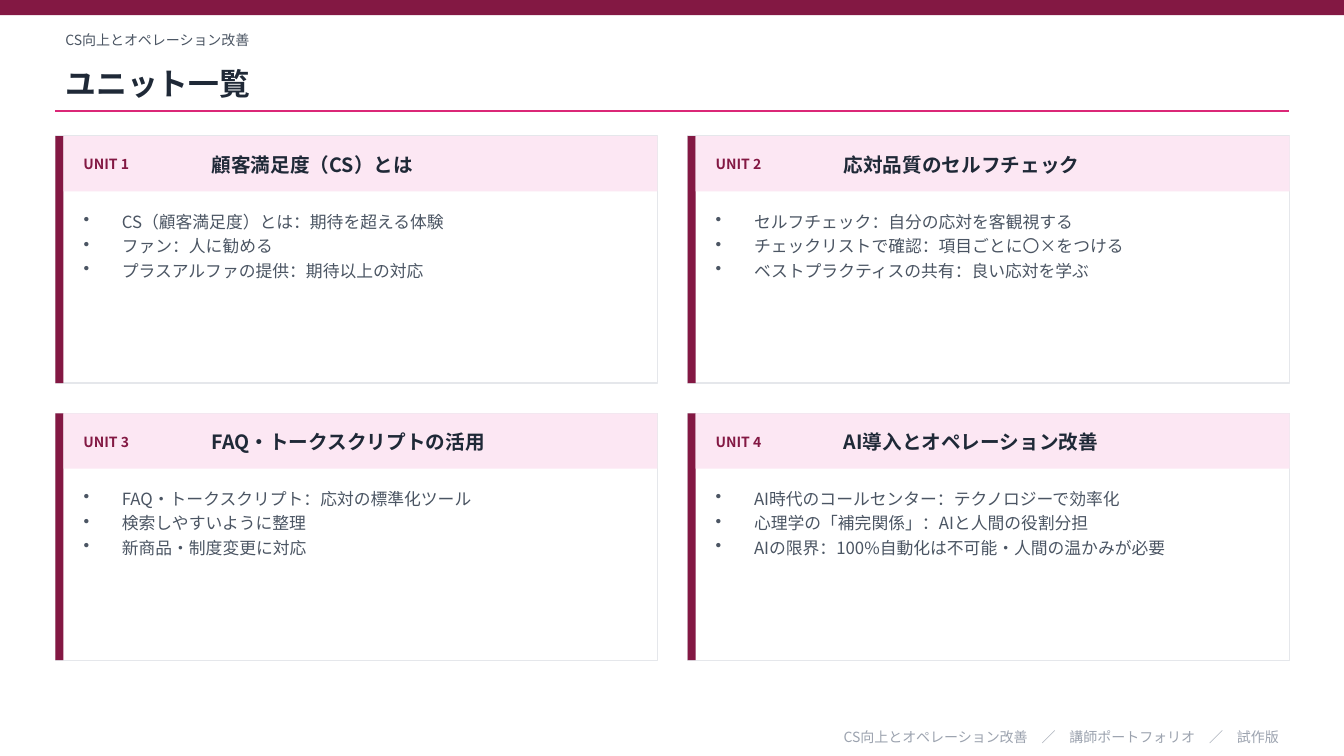
from pptx import Presentation
from pptx.dml.color import RGBColor
from pptx.enum.shapes import MSO_CONNECTOR, MSO_SHAPE
from pptx.enum.text import MSO_ANCHOR, MSO_AUTO_SIZE, PP_ALIGN
from pptx.oxml.ns import qn
from pptx.util import Inches, Pt
from lxml import etree

RECT, STRAIGHT = MSO_SHAPE.RECTANGLE, MSO_CONNECTOR.STRAIGHT
TOP, MIDDLE = MSO_ANCHOR.TOP, MSO_ANCHOR.MIDDLE
LEFT, RIGHT = PP_ALIGN.LEFT, PP_ALIGN.RIGHT

WINE = RGBColor(0x83, 0x18, 0x43)
PINK = RGBColor(0xDB, 0x27, 0x77)
BLUSH = RGBColor(0xFC, 0xE7, 0xF3)
WHITE = RGBColor(0xFF, 0xFF, 0xFF)
BORDER = RGBColor(0xE5, 0xE7, 0xEB)
INK = RGBColor(0x1F, 0x29, 0x37)
SLATE = RGBColor(0x4B, 0x55, 0x63)
MUTED = RGBColor(0x9C, 0xA3, 0xAF)

FONT = "Noto Sans CJK JP"
COLS, ROWS = 133.3, 75  # grid of tenths of an inch
MARGIN, CONTENT_W = 5.5, 122.3
CARD_TOP, CARD_W, CARD_H, GAP = 13.5, 59.7, 24.5, 3
STRIPE = 0.8

UNITS = [
    ("顧客満足度（CS）とは",
     ["CS（顧客満足度）とは：期待を超える体験",
      "ファン：人に勧める",
      "プラスアルファの提供：期待以上の対応"]),
    ("応対品質のセルフチェック",
     ["セルフチェック：自分の応対を客観視する",
      "チェックリストで確認：項目ごとに〇×をつける",
      "ベストプラクティスの共有：良い応対を学ぶ"]),
    ("FAQ・トークスクリプトの活用",
     ["FAQ・トークスクリプト：応対の標準化ツール",
      "検索しやすいように整理",
      "新商品・制度変更に対応"]),
    ("AI導入とオペレーション改善",
     ["AI時代のコールセンター：テクノロジーで効率化",
      "心理学の「補完関係」：AIと人間の役割分担",
      "AIの限界：100%自動化は不可能・人間の温かみが必要"]),
]


def grid(*cells):
    return [Inches(c / 10) for c in cells]


def write(tf, lines, size=10, color=SLATE, bold=False, align=LEFT,
          anchor=MIDDLE, bullet=None, after=0):
    tf.word_wrap = True
    tf.auto_size = MSO_AUTO_SIZE.NONE
    tf.vertical_anchor = anchor
    for i, line in enumerate(lines):
        p = tf.paragraphs[0] if i == 0 else tf.add_paragraph()
        p.alignment = align
        p.space_after = Pt(after)
        if bullet:
            pPr = p._p.get_or_add_pPr()
            pPr.set("marL", str(Inches(0.38)))
            pPr.set("indent", str(-Inches(0.38)))
            etree.SubElement(pPr, qn("a:buChar")).set("char", bullet)
        r = p.add_run()
        r.text = line
        r.font.size, r.font.bold, r.font.name = Pt(size), bold, FONT
        r.font.color.rgb = color
        # East Asian glyphs use the same typeface
        etree.SubElement(r._r.get_or_add_rPr(), qn("a:ea")).set("typeface", FONT)


class Deck:
    def __init__(self):
        self.prs = Presentation()
        self.prs.slide_width, self.prs.slide_height = grid(COLS, ROWS)
        self.s = self.prs.slides.add_slide(self.prs.slide_layouts[5])

    def title(self, text, box, **style):
        sp = self.s.shapes.title
        sp.left, sp.top, sp.width, sp.height = grid(*box)
        write(sp.text_frame, [text], **style)

    def text(self, lines, box, **style):
        sp = self.s.shapes.add_textbox(*grid(*box))
        write(sp.text_frame, lines, **style)

    def rect(self, box, fill, line=None):
        sp = self.s.shapes.add_shape(RECT, *grid(*box))
        sp.shadow.inherit = False
        sp.fill.solid()
        sp.fill.fore_color.rgb = fill
        if line is None:
            sp.line.fill.background()
        else:
            sp.line.color.rgb, sp.line.width = line, Pt(1)

    def rule(self, x, y, w, color):
        ln = self.s.shapes.add_connector(STRAIGHT, *grid(x, y, x + w, y))
        ln.line.color.rgb, ln.line.width = color, Pt(1)
        etree.SubElement(ln._element.spPr, qn("a:effectLst"))

    def card(self, n, heading, points):
        row, col = divmod(n, 2)
        x = MARGIN + col * (CARD_W + GAP)
        y = CARD_TOP + row * (CARD_H + GAP)
        self.rect((x, y, CARD_W, CARD_H), WHITE, BORDER)
        self.rect((x, y, STRIPE, CARD_H), WINE)
        self.rect((x + STRIPE, y, CARD_W - STRIPE, 5.5), BLUSH)
        self.text([f"UNIT {n + 1}"], (x + 1.8, y + 0.8, 12, 4),
                  color=WINE, bold=True)
        self.text([heading], (x + 14.5, y + 0.8, 43.7, 4),
                  size=14, color=INK, bold=True)
        self.text(points, (x + 1.8, y + 7, 56.1, 16),
                  size=12, anchor=TOP, bullet="•", after=3)


def main():
    deck = Deck()

    # Header
    deck.rect((0, 0, COLS, 1.5), WINE)
    deck.text(["CS向上とオペレーション改善"], (MARGIN, 2.5, CONTENT_W, 3))
    deck.title("ユニット一覧", (MARGIN, 5.5, CONTENT_W, 5.5),
               size=22, color=INK, bold=True)
    deck.rule(MARGIN, 11, CONTENT_W, PINK)

    # Unit cards
    for n, (heading, points) in enumerate(UNITS):
        deck.card(n, heading, points)

    # Footer
    deck.text(["CS向上とオペレーション改善　／　講師ポートフォリオ　／　試作版"],
              (MARGIN, 72, CONTENT_W, 2.2), color=MUTED, align=RIGHT)

    deck.prs.save("out.pptx")


if __name__ == "__main__":
    main()
